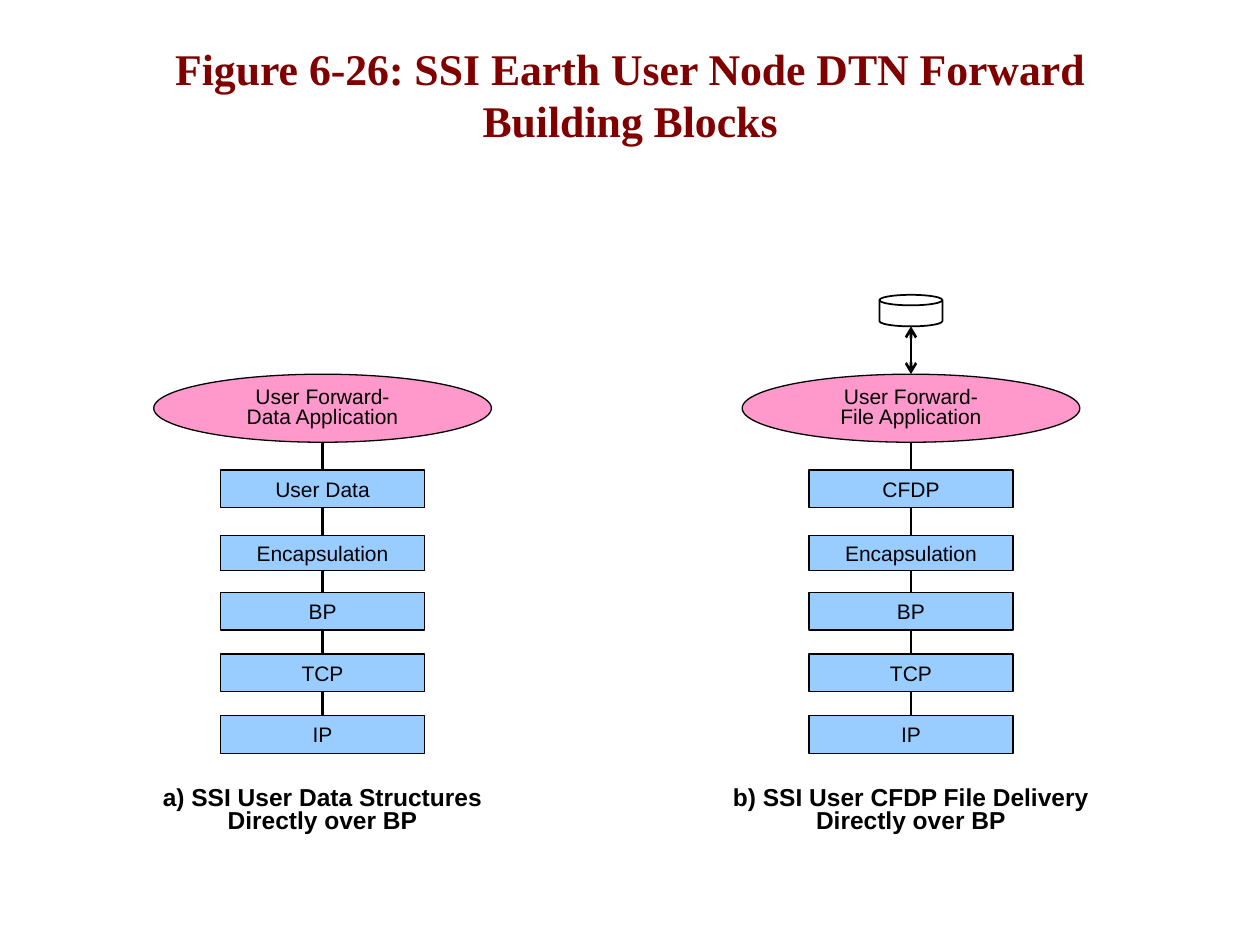
from dataclasses import dataclass

from lxml import etree
from pptx import Presentation
from pptx.dml.color import RGBColor
from pptx.enum.shapes import MSO_CONNECTOR, MSO_SHAPE
from pptx.enum.text import MSO_ANCHOR, MSO_AUTO_SIZE, PP_ALIGN
from pptx.oxml.ns import qn
from pptx.util import Inches, Pt

OVAL, BOX, DISK = MSO_SHAPE.OVAL, MSO_SHAPE.RECTANGLE, MSO_SHAPE.FLOWCHART_MAGNETIC_DISK
STRAIGHT = MSO_CONNECTOR.STRAIGHT
MIDDLE, CENTER = MSO_ANCHOR.MIDDLE, PP_ALIGN.CENTER
TOP_SITE = 0


@dataclass(frozen=True)
class Theme:
    title_font: str = "Times New Roman"
    body_font: str = "Arial"
    title_color: str = "800000"
    ink: str = "000000"
    paper: str = "FFFFFF"
    application: str = "FF99CC"
    protocol: str = "99CCFF"
    title_size: float = 25
    label_size: float = 12
    caption_size: float = 14
    tight: float = 0.8
    thin: float = 0.75
    disk_line: float = 1
    thick: float = 1.5


THEME = Theme()

TITLE = "Figure 6-26: SSI Earth User Node DTN Forward Building Blocks"
STACKS = [
    {"center": 2.56, "application": ["User Forward-", "Data Application"],
     "layers": ["User Data", "Encapsulation", "BP", "TCP", "IP"],
     "caption": ["a) SSI User Data Structures", "Directly over BP"],
     "caption_width": 2.76, "has_storage": False},
    {"center": 7.23, "application": ["User Forward-", "File Application"],
     "layers": ["CFDP", "Encapsulation", "BP", "TCP", "IP"],
     "caption": ["b) SSI User CFDP File Delivery", "Directly over BP"],
     "caption_width": 3.06, "has_storage": True},
]

# Vertical plan shared by both stacks: (top, height)
DISK_ROW = (2.34, 0.25)
APPLICATION_ROW = (2.97, 0.54)
LAYER_ROWS = [(3.73, 0.3), (4.25, 0.28)] + [(4.7 + 0.49 * row, 0.3) for row in range(3)]
CAPTION_ROW = (6.19, 0.49)
DISK_WIDTH, APPLICATION_WIDTH, LAYER_WIDTH = 0.5, 2.68, 1.62


def centered(center, width, row):
    top, height = row
    return [Inches(value) for value in (center - width / 2, top, width, height)]


def write(shape, lines, size, font=THEME.body_font, color=THEME.ink, bold=False,
          spacing=None, margins=None, wrap=True):
    frame = shape.text_frame
    settings = {"word_wrap": wrap, "auto_size": MSO_AUTO_SIZE.NONE, "vertical_anchor": MIDDLE}
    if margins:
        side, edge = (Inches(margin) for margin in margins)
        settings.update(margin_left=side, margin_right=side, margin_top=edge, margin_bottom=edge)
    for name, value in settings.items():
        setattr(frame, name, value)
    for index, line in enumerate(lines):
        paragraph = frame.add_paragraph() if index else frame.paragraphs[0]
        paragraph.alignment = CENTER
        if spacing:
            paragraph.line_spacing = spacing
        run = paragraph.add_run()
        run.text = line
        for name, value in {"name": font, "size": Pt(size), "bold": bold}.items():
            setattr(run.font, name, value)
        run.font.color.rgb = RGBColor.from_string(color)


def add_block(slide, kind, place, fill, line_width=THEME.thin):
    shape = slide.shapes.add_shape(kind, *place)
    shape.shadow.inherit = False
    shape.fill.solid()
    shape.fill.fore_color.rgb = RGBColor.from_string(fill)
    shape.line.color.rgb = RGBColor.from_string(THEME.ink)
    shape.line.width = Pt(line_width)
    return shape


def add_vertical_line(slide, center, start, end, arrowheads=False):
    line = slide.shapes.add_connector(
        STRAIGHT, Inches(center), Inches(start), Inches(center), Inches(end))
    line.line.color.rgb = RGBColor.from_string(THEME.ink)
    line.line.width = Pt(THEME.thick)
    if arrowheads:
        outline = line.line._get_or_add_ln()
        for tag in ("a:headEnd", "a:tailEnd"):
            etree.SubElement(outline, qn(tag), type="arrow")
    etree.SubElement(line._element.spPr, qn("a:effectLst"))
    return line


def add_stack(slide, stack):
    center = stack["center"]
    application_top, application_height = APPLICATION_ROW
    # The spine comes first so that it lies behind the blocks.
    spine = add_vertical_line(
        slide, center, application_top + application_height, LAYER_ROWS[-1][0])

    application = add_block(
        slide, OVAL, centered(center, APPLICATION_WIDTH, APPLICATION_ROW), THEME.application)
    write(application, stack["application"], THEME.label_size,
          spacing=THEME.tight, margins=(0, 0))

    for label, row in zip(stack["layers"], LAYER_ROWS):
        layer = add_block(slide, BOX, centered(center, LAYER_WIDTH, row), THEME.protocol)
        write(layer, [label], THEME.label_size, margins=(0.04, 0.03))
    spine.end_connect(layer, TOP_SITE)

    if stack["has_storage"]:
        add_block(slide, DISK, centered(center, DISK_WIDTH, DISK_ROW),
                  THEME.paper, THEME.disk_line)
        arrow = add_vertical_line(slide, center, application_top, sum(DISK_ROW), arrowheads=True)
        arrow.begin_connect(application, TOP_SITE)

    caption = slide.shapes.add_textbox(*centered(center, stack["caption_width"], CAPTION_ROW))
    write(caption, stack["caption"], THEME.caption_size, bold=True,
          spacing=THEME.tight, wrap=False)


def main():
    presentation = Presentation()
    presentation.slide_width, presentation.slide_height = Inches(10), Inches(7.5)
    slide = presentation.slides.add_slide(presentation.slide_layouts.get_by_name("Title Only"))
    title = slide.shapes.title
    title.left, title.top, title.width, title.height = centered(5, 8.5, (0.33, 0.83))
    write(title, [TITLE], THEME.title_size, THEME.title_font, THEME.title_color, bold=True)
    for stack in STACKS:
        add_stack(slide, stack)
    presentation.save("out.pptx")


if __name__ == "__main__":
    main()
